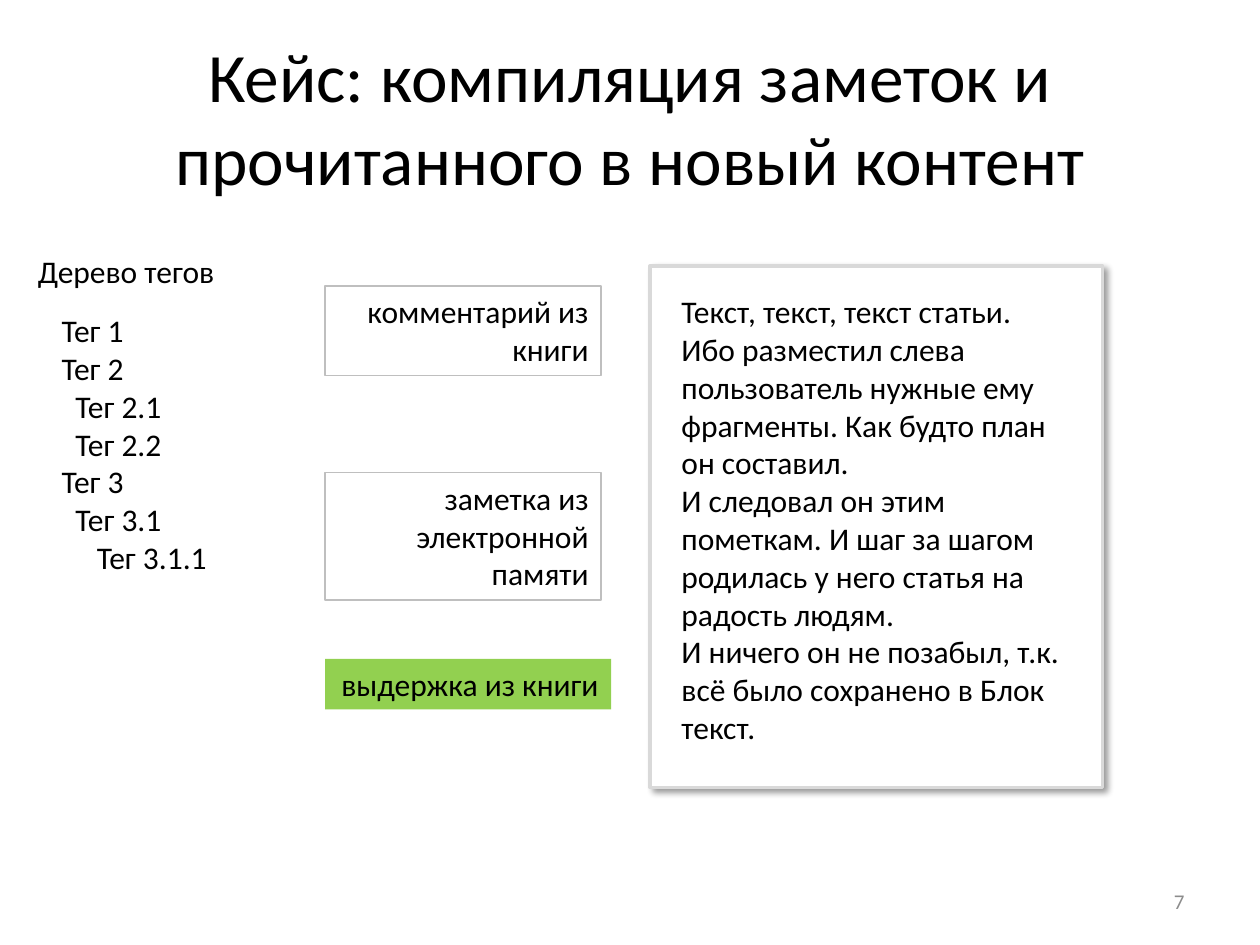
from lxml import etree
from pptx import Presentation
from pptx import util as u
from pptx.dml.color import RGBColor
from pptx.enum import shapes, text
from pptx.oxml.ns import qn

LEFT, CENTER, RIGHT = text.PP_ALIGN.LEFT, text.PP_ALIGN.CENTER, text.PP_ALIGN.RIGHT
FONT = "Calibri"
BLACK = "000000"
INDENTS = (0, 0.11, 0.28)
TAGS = [("Тег 1", 0), ("Тег 2", 0), ("Тег 2.1", 1), ("Тег 2.2", 1),
        ("Тег 3", 0), ("Тег 3.1", 1), ("Тег 3.1.1", 2)]
FRAGMENTS = [
    ("комментарий из книги", 2.27, 2.19, 0.71, None, "BFBFBF"),
    ("заметка из электронной памяти", 3.75, 2.19, 1.01, None, "BFBFBF"),
    ("выдержка из книги", 5.23, 2.27, 0.4, "92D050", None),
]
ARTICLE = [
    "Текст, текст, текст статьи.",
    "Ибо разместил слева пользователь нужные ему фрагменты. Как будто план он составил.",
    "И следовал он этим пометкам. И шаг за шагом родилась у него статья на радость людям.",
    "И ничего он не позабыл, т.к. всё было сохранено в Блок текст.",
]


def color(value):
    return RGBColor.from_string(value)


def inches(box):
    return [u.Inches(v) for v in box]


def write(tf, lines, align=LEFT, size=18, ink=BLACK, anchor=text.MSO_ANCHOR.TOP):
    tf.word_wrap = True
    tf.vertical_anchor = anchor
    for i, line in enumerate(lines):
        p = tf.paragraphs[0] if i == 0 else tf.add_paragraph()
        p.alignment = align
        r = p.add_run()
        r.text = line
        r.font.name = FONT
        r.font.size = u.Pt(size)
        r.font.color.rgb = color(ink)


def add_text(s, box, lines, **style):
    tf = s.shapes.add_textbox(*inches(box)).text_frame
    write(tf, lines, **style)
    return tf


def add_rect(s, box, fill=None, line=None, width=1):
    sp = s.shapes.add_shape(shapes.MSO_SHAPE.RECTANGLE, *inches(box))
    sp.shadow.inherit = False
    if fill:
        sp.fill.solid()
        sp.fill.fore_color.rgb = color(fill)
    else:
        sp.fill.background()
    if line:
        sp.line.color.rgb = color(line)
        sp.line.width = u.Pt(width)
    else:
        sp.line.fill.background()
    return sp


def add_shadow(sp):
    effects = sp._element.spPr.find(qn("a:effectLst"))
    shadow = etree.SubElement(effects, qn("a:outerShdw"), blurRad=str(u.Pt(4)),
                              dist=str(u.Pt(3)), dir="2700000", algn="tl", rotWithShape="0")
    clr = etree.SubElement(shadow, qn("a:srgbClr"), val=BLACK)
    etree.SubElement(clr, qn("a:alpha"), val="40000")


def build_title(s, box):
    title = s.shapes.title
    title.left, title.top, title.width, title.height = inches(box)
    write(title.text_frame, ["Кейс: компиляция заметок и прочитанного в новый контент"],
          CENTER, 39.6, anchor=text.MSO_ANCHOR.MIDDLE)


def build_tag_tree(s, box):
    x, y, w, h = box
    add_text(s, (x, y, 1.8, 0.4), ["Дерево тегов"], align=RIGHT)
    tf = add_text(s, (x + 0.39, y + 0.47, w - 0.39, h - 0.47), [tag for tag, _ in TAGS])
    for p, (_, level) in zip(tf.paragraphs, TAGS):
        p._p.get_or_add_pPr().set("marL", str(u.Inches(INDENTS[level])))


def build_fragments(s, left):
    for label, top, width, height, fill, line in FRAGMENTS:
        sp = add_rect(s, (left, top, width, height), fill, line)
        write(sp.text_frame, [label], RIGHT)
        sp.text_frame.auto_size = text.MSO_AUTO_SIZE.SHAPE_TO_FIT_TEXT


def build_article(s, box):
    x, y, w, h = box
    add_shadow(add_rect(s, box, "FFFFFF", "D9D9D9", 2))
    add_text(s, (x + 0.15, y + 0.16, w - 0.31, h - 0.4), ARTICLE)


def build_page_number(s, box):
    add_text(s, box, ["7"], align=RIGHT, size=12, ink="8C8C8C", anchor=text.MSO_ANCHOR.MIDDLE)


def main():
    prs = Presentation()
    prs.slide_width, prs.slide_height = u.Inches(10), u.Inches(7.5)
    s = prs.slides.add_slide(prs.slide_layouts[5])
    build_title(s, (0.5, 0.3, 9, 1.25))
    build_article(s, (5.16, 2.11, 3.59, 4.14))
    build_fragments(s, 2.58)
    build_tag_tree(s, (0, 1.95, 2.58, 2.69))
    build_page_number(s, (7.17, 6.95, 2.33, 0.4))
    prs.save("out.pptx")


if __name__ == "__main__":
    main()
